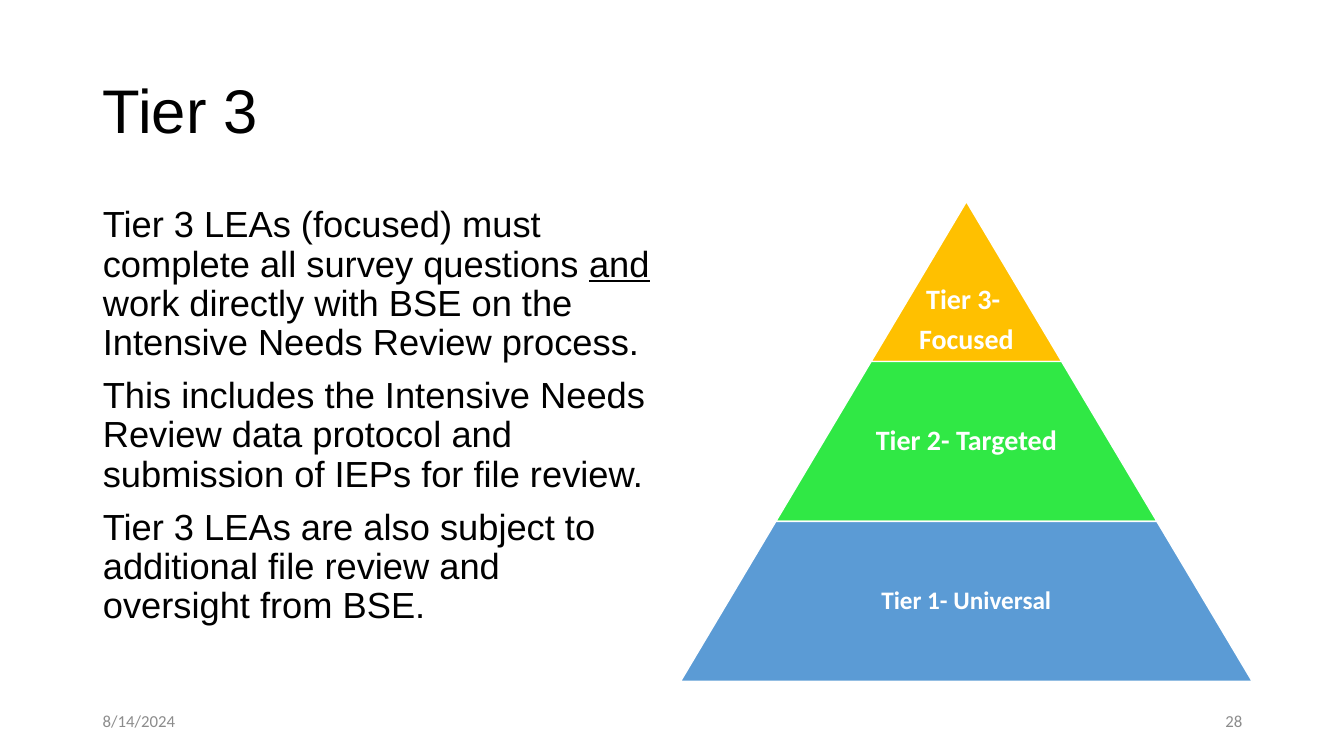
from lxml import etree
from pptx import Presentation
from pptx.dml.color import RGBColor
from pptx.enum.shapes import MSO_SHAPE
from pptx.enum.text import MSO_ANCHOR, MSO_AUTO_SIZE, PP_ALIGN
from pptx.oxml.ns import qn
from pptx.util import Inches, Pt

TRAPEZOID = MSO_SHAPE.TRAPEZOID
TOP, MIDDLE = MSO_ANCHOR.TOP, MSO_ANCHOR.MIDDLE
LEFT, CENTER, RIGHT = PP_ALIGN.LEFT, PP_ALIGN.CENTER, PP_ALIGN.RIGHT
NO_AUTOFIT = MSO_AUTO_SIZE.NONE

BODY = [
    [("Tier 3 LEAs (focused) must complete all survey questions ", False),
     ("and ", True),
     ("work directly with BSE on the Intensive Needs Review process.", False)],
    [("This includes the Intensive Needs Review data protocol and "
      "submission of IEPs for file review.", False)],
    [("Tier 3 LEAs are also subject to additional file review and "
      "oversight from BSE.", False)],
]
# Label lines, fill, text size; from the tip down
TIERS = [
    (["Tier 3- ", "Focused"], "FFC000", 20),
    (["Tier 2- Targeted"], "30E845", 20),
    (["Tier 1- Universal"], "5B9BD5", 18),
]


def rgb(value):
    return RGBColor.from_string(value)


def place(sp, box):
    sp.left, sp.top, sp.width, sp.height = (Inches(v) for v in box)


def add_run(p, text, size, font, color, bold=False, underline=False):
    r = p.add_run()
    r.text = text
    r.font.size, r.font.name = Pt(size), font
    r.font.bold, r.font.underline = bold, underline
    r.font.color.rgb = rgb(color)


def set_frame(tf, anchor, wrap=True):
    tf.auto_size = NO_AUTOFIT
    tf.word_wrap = wrap
    tf.vertical_anchor = anchor


def next_paragraph(tf, index, align):
    p = tf.paragraphs[0] if index == 0 else tf.add_paragraph()
    p.alignment = align
    p.line_spacing = 0.9
    p.space_before = Pt(0)
    return p


def fill_title(sp, box):
    place(sp, box)
    set_frame(sp.text_frame, MIDDLE)
    add_run(next_paragraph(sp.text_frame, 0, LEFT), "Tier 3", 44, "Arial", "000000")


def fill_body(sp, box):
    place(sp, box)
    tf = sp.text_frame
    set_frame(tf, TOP)
    for i, runs in enumerate(BODY):
        p = next_paragraph(tf, i, LEFT)
        if i:
            p.space_before = Pt(10)
        pPr = p._p.get_or_add_pPr()
        pPr.set("marL", "0")
        pPr.set("indent", "0")
        etree.SubElement(pPr, qn("a:buNone"))
        for text, underline in runs:
            add_run(p, text, 25.9, "Arial", "000000", underline=underline)


def add_pyramid(s, box):
    """Stack equal-height trapezoids that form one triangle filling the box."""
    left, top, width, height = box
    tier_h = height / len(TIERS)
    step = width / len(TIERS)
    for i, (lines, fill, size) in enumerate(TIERS):
        tier_w = step * (i + 1)
        sp = s.shapes.add_shape(TRAPEZOID, 0, 0, 0, 0)
        place(sp, (left + (width - tier_w) / 2, top + i * tier_h, tier_w, tier_h))
        sp.adjustments[0] = step / 2 / tier_h
        sp.shadow.inherit = False
        sp.fill.solid()
        sp.fill.fore_color.rgb = rgb(fill)
        sp.line.color.rgb = rgb("FFFFFF")
        sp.line.width = Pt(1)

        tf = sp.text_frame
        set_frame(tf, MIDDLE, wrap=False)
        tf.margin_left = tf.margin_right = 0
        # A trapezoid's text area starts below its top: balance it, but keep
        # the tip's label low, where the triangle is wide enough.
        tf.margin_top = Inches(0 if i else 0.25)
        tf.margin_bottom = Inches(tier_h / 3 / (i + 1) if i else 0)
        for j, line in enumerate(lines):
            p = next_paragraph(tf, j, CENTER)
            if j < len(lines) - 1:
                p.space_after = Pt(7)
            add_run(p, line, size, "Calibri", "FFFFFF", bold=True)


def add_footer(s, box, text, align):
    sp = s.shapes.add_textbox(0, 0, 0, 0)
    place(sp, box)
    set_frame(sp.text_frame, MIDDLE)
    p = sp.text_frame.paragraphs[0]
    p.alignment = align
    add_run(p, text, 12, "Calibri", "8C8C8C")


def main():
    prs = Presentation()
    prs.slide_width, prs.slide_height = Inches(13.33), Inches(7.5)
    s = prs.slides.add_slide(prs.slide_layouts[1])
    fill_title(s.shapes.title, (0.92, 0.4, 11.5, 1.45))
    fill_body(s.placeholders[1], (0.92, 2, 5.67, 4.76))
    add_pyramid(s, (6.75, 2, 5.67, 4.76))
    add_footer(s, (0.92, 6.95, 3, 0.4), "8/14/2024", LEFT)
    add_footer(s, (9.42, 6.95, 3, 0.4), "28", RIGHT)
    prs.save("out.pptx")


if __name__ == "__main__":
    main()
